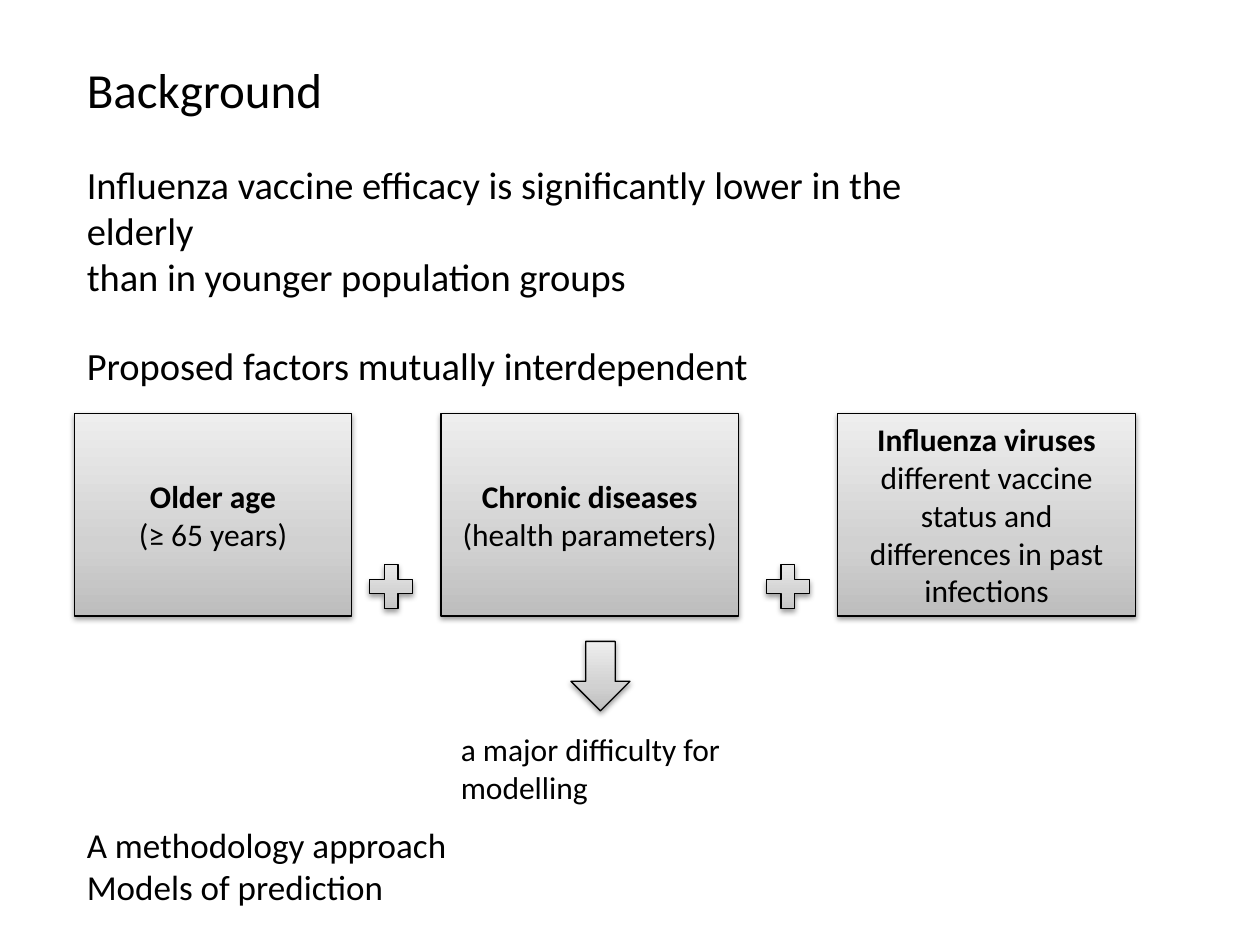
from dataclasses import dataclass

from lxml.etree import SubElement
from pptx import Presentation
from pptx.dml.color import RGBColor
from pptx.enum.shapes import MSO_SHAPE
from pptx.enum.text import MSO_ANCHOR, PP_ALIGN
from pptx.oxml.ns import qn
from pptx.util import Cm, Pt


@dataclass(frozen=True)
class Theme:
    font: str = "Calibri"
    ink: str = "000000"
    gradient: tuple = ((0, "BDBDBD"), (35, "D1D1D1"), (100, "EEEEEE"))
    outline: float = 0.75
    title: int = 28
    statement: int = 22
    closing: int = 20
    label: int = 18


THEME = Theme()


@dataclass(frozen=True)
class Box:
    """A region of the slide, in centimetres."""
    left: float
    top: float
    width: float
    height: float

    @property
    def bottom(self):
        return self.top + self.height

    def lengths(self):
        return [Cm(n) for n in (self.left, self.top, self.width, self.height)]


def add_text(paragraph, text, size=THEME.label, bold=False, align=PP_ALIGN.LEFT,
             before=0):
    """Append a run to the paragraph and format it."""
    paragraph.alignment = align
    if before:
        paragraph.space_before = Pt(before)
    run = paragraph.add_run()
    run.text = text
    run.font.name = THEME.font
    run.font.size = Pt(size)
    run.font.bold = bold
    run.font.color.rgb = RGBColor.from_string(THEME.ink)


def add_color(parent, color):
    return SubElement(parent, qn("a:srgbClr"), val=color)


def add_raised_shape(slide, kind, box):
    """Add a grey gradient shape with a thin outline and a soft shadow below."""
    shape = slide.shapes.add_shape(kind, *box.lengths())
    shape.line.color.rgb = RGBColor.from_string(THEME.ink)
    shape.line.width = Pt(THEME.outline)
    shape.fill.gradient()
    shape.fill.gradient_angle = 90
    properties = shape._element.spPr
    stops = properties.find(".//" + qn("a:gsLst"))
    for stop in list(stops):
        stops.remove(stop)
    for position, color in THEME.gradient:
        add_color(SubElement(stops, qn("a:gs"), pos=str(position * 1000)), color)
    shape.shadow.inherit = False
    shadow = SubElement(properties.find(qn("a:effectLst")), qn("a:outerShdw"),
                        blurRad="40000", dist="20000", dir="5400000",
                        rotWithShape="0")
    SubElement(add_color(shadow, THEME.ink), qn("a:alpha"), val="38000")
    return shape


def add_text_block(slide, box, lines):
    """Add a text box; each line is its text and its format."""
    frame = slide.shapes.add_textbox(*box.lengths()).text_frame
    frame.word_wrap = True
    for index, (text, style) in enumerate(lines):
        paragraph = frame.add_paragraph() if index else frame.paragraphs[0]
        add_text(paragraph, text, **style)


def add_factor(slide, box, name, detail):
    frame = add_raised_shape(slide, MSO_SHAPE.RECTANGLE, box).text_frame
    frame.word_wrap = True
    frame.vertical_anchor = MSO_ANCHOR.MIDDLE
    paragraph = frame.paragraphs[0]
    add_text(paragraph, name, bold=True, align=PP_ALIGN.CENTER)
    paragraph.add_line_break()
    add_text(paragraph, detail, align=PP_ALIGN.CENTER)


def add_factor_row(slide, box, factors):
    """Place the factors, with a plus sign before each but the first."""
    plus_size, plus_lead = 1.19, 1.6
    for index, (offset, width, name, detail) in enumerate(factors):
        left = box.left + offset
        add_factor(slide, Box(left, box.top, width, box.height), name, detail)
        if index:
            add_raised_shape(slide, MSO_SHAPE.MATH_PLUS,
                             Box(left - plus_lead, box.bottom - plus_size,
                                 plus_size, plus_size))


def add_consequence(slide, box, text):
    """Place a down arrow with its caption underneath."""
    arrow_width, arrow_height, caption_offset = 1.19, 1.4, 1.67
    add_raised_shape(slide, MSO_SHAPE.DOWN_ARROW,
                     Box(box.left + 2.47, box.top, arrow_width, arrow_height))
    caption = Box(box.left, box.top + caption_offset, box.width,
                  box.height - caption_offset)
    add_text_block(slide, caption, [(text, {})])


def main():
    presentation = Presentation()
    presentation.slide_width, presentation.slide_height = Cm(25.4), Cm(19.05)
    slide = presentation.slides.add_slide(presentation.slide_layouts[6])
    margin = 1.5

    statement = {"size": THEME.statement}
    new_topic = {"size": THEME.statement, "before": 24.4}
    add_text_block(slide, Box(margin, 1.07, 17.81, 6.93), [
        ("Background", {"size": THEME.title}),
        ("Influenza vaccine efficacy is significantly lower in the elderly", new_topic),
        ("than in younger population groups", statement),
        ("Proposed factors mutually interdependent", new_topic),
    ])
    add_factor_row(slide, Box(margin, 8.33, 21.38, 4.09), [
        (0, 5.59, "Older age", "(≥ 65 years)"),
        (7.39, 6, "Chronic diseases", "(health parameters)"),
        (15.39, 6, "Influenza viruses",
         "different vaccine status and differences in past infections"),
    ])
    add_consequence(slide, Box(9.04, 12.93, 6, 3.47),
                    "a major difficulty for modelling")
    closing = {"size": THEME.closing}
    add_text_block(slide, Box(margin, 16.48, 8.18, 1.96), [
        ("A methodology approach", closing),
        ("Models of prediction", closing),
    ])
    presentation.save("out.pptx")


if __name__ == "__main__":
    main()
